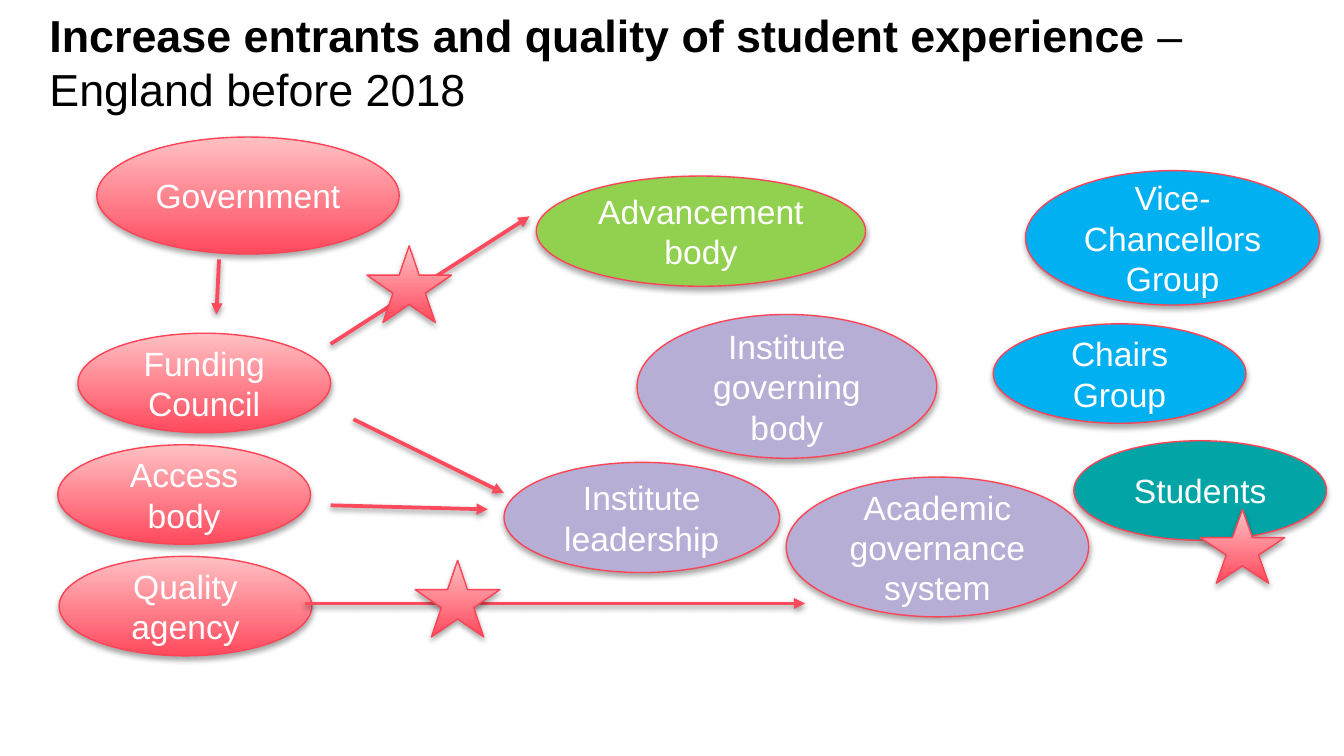
from pptx import Presentation
from pptx.dml.color import RGBColor
from pptx.enum.shapes import MSO_CONNECTOR, MSO_SHAPE
from pptx.enum.text import MSO_ANCHOR, PP_ALIGN
from pptx.oxml import parse_xml
from pptx.oxml.ns import nsdecls
from pptx.util import Inches, Pt

OVAL, STAR = MSO_SHAPE.OVAL, MSO_SHAPE.STAR_5_POINT
STRAIGHT = MSO_CONNECTOR.STRAIGHT
MIDDLE, CENTER = MSO_ANCHOR.MIDDLE, PP_ALIGN.CENTER

BLACK = RGBColor(0x00, 0x00, 0x00)
WHITE = RGBColor(0xFF, 0xFF, 0xFF)
RED = RGBColor(0xFF, 0x49, 0x5C)
PINK = RGBColor(0xFF, 0xC1, 0xC4)
EDGE = RGBColor(0xFD, 0x44, 0x57)
ARROW = RGBColor(0xFE, 0x4A, 0x5D)
BLUE = RGBColor(0x00, 0xB0, 0xF0)
GREEN = RGBColor(0x92, 0xD0, 0x50)
LILAC = RGBColor(0xB7, 0xAE, 0xD6)
TEAL = RGBColor(0x02, 0xA4, 0xA6)

HEAD = {"name": "Arial", "size": Pt(24)}
LABEL = {"name": "Arial", "size": Pt(18)}
SMALL = (1.88, 0.74)


def style(font, form, color):
    """Apply the format values and the colour to a font."""
    for key, value in form.items():
        setattr(font, key, value)
    font.color.rgb = color


def shade(item, alpha, dist):
    """Give a shape or connector a soft shadow straight below it."""
    item._element.spPr.append(parse_xml(
        f'<a:effectLst {nsdecls("a")}>'
        f'<a:outerShdw blurRad="{Pt(3.1)}" dist="{Pt(dist)}" dir="5400000" rotWithShape="0">'
        f'<a:srgbClr val="000000"><a:alpha val="{alpha * 1000}"/></a:srgbClr>'
        '</a:outerShdw></a:effectLst>'))


def figure(slide, kind, box, color=None):
    """Draw one outlined shape, with the red gradient if no colour is given."""
    shape = slide.shapes.add_shape(kind, *map(Inches, box))
    if color is None:
        shape.fill.gradient()
        shape.fill.gradient_angle = 90
        for stop, tone in zip(shape.fill.gradient_stops, (RED, PINK)):
            stop.color.rgb = tone
    else:
        shape.fill.solid()
        shape.fill.fore_color.rgb = color
    shape.line.color.rgb = EDGE
    shape.line.width = Pt(0.75)
    shade(shape, 35, 1.8)
    return shape


def heading(slide, box):
    """Write the heading with its bold and plain parts."""
    frame = slide.shapes.add_textbox(*map(Inches, box)).text_frame
    frame.word_wrap = True
    frame.vertical_anchor = MIDDLE
    line = frame.paragraphs[0]
    parts = (("Increase entrants and quality of student experience", True),
             (" – England before 2018", False))
    for text, bold in parts:
        run = line.add_run()
        run.text = text
        style(run.font, {**HEAD, "bold": bold}, BLACK)


def bodies(slide, left, top, ovals):
    """Place labelled ovals relative to the corner of their region."""
    for text, color, x, y, size in ovals:
        frame = figure(slide, OVAL, (left + x, top + y, *size), color).text_frame
        frame.word_wrap = True
        frame.vertical_anchor = MIDDLE
        line = frame.paragraphs[0]
        line.alignment = CENTER
        run = line.add_run()
        run.text = text
        style(run.font, LABEL, WHITE)


def funders(slide, left, top):
    """Place the state bodies, the lower three at an even step."""
    names = (("Funding Council", 0.15), ("Access body", 0), ("Quality agency", 0.01))
    ovals = [("Government", None, 0.29, 0, (2.25, 0.87))]
    ovals += [(name, None, x, 1.46 + 0.83 * row, SMALL)
              for row, (name, x) in enumerate(names)]
    bodies(slide, left, top, ovals)


def sector(slide, left, top):
    """Place the advancement body and the parts of the institute."""
    bodies(slide, left, top, (
        ("Advancement body", GREEN, 0.24, 0, (2.45, 0.82)),
        ("Institute governing body", LILAC, 0.99, 1.03, (2.23, 1.07)),
        ("Institute leadership", LILAC, 0, 2.13, (2.05, 0.82)),
        ("Academic governance system", LILAC, 2.1, 2.24, (2.25, 1.04))))


def members(slide, left, top):
    """Place the sector groups and the students."""
    bodies(slide, left, top, (
        ("Vice-Chancellors Group", BLUE, 0.24, 0, (2.19, 1)),
        ("Chairs Group", BLUE, 0, 1.14, SMALL),
        ("Students", TEAL, 0.6, 2.01, SMALL)))


def arrows(slide, left, top):
    """Draw the arrows of influence between the bodies."""
    routes = ((2.03, 1.54, 3.51, 0.59), (1.84, 3.47, 5.56, 3.47),
              (2.2, 2.1, 3.32, 2.65), (1.2, 0.91, 1.18, 1.32),
              (2.03, 2.74, 3.2, 2.77))
    for x1, y1, x2, y2 in routes:
        ends = (left + x1, top + y1, left + x2, top + y2)
        arrow = slide.shapes.add_connector(STRAIGHT, *map(Inches, ends))
        arrow.line.color.rgb = ARROW
        arrow.line.width = Pt(2)
        arrow.line._get_or_add_ln().append(
            parse_xml(f'<a:tailEnd {nsdecls("a")} type="triangle"/>'))
        shade(arrow, 38, 1.6)


def stars(slide, left, top):
    """Mark the key points with stars."""
    for x, y, height in ((2.3, 0.81, 0.57), (2.66, 3.15, 0.57), (8.5, 2.77, 0.55)):
        figure(slide, STAR, (left + x, top + y, 0.63, height))


def main():
    """Build and save the slide."""
    deck = Presentation()
    deck.slide_width = Inches(10)
    deck.slide_height = deck.slide_width * 9 // 16
    slide = deck.slides.add_slide(deck.slide_layouts[6])
    heading(slide, (0.27, -0.01, 9, 0.94))
    funders(slide, 0.43, 1.02)
    sector(slide, 3.75, 1.31)
    members(slide, 7.39, 1.27)
    arrows(slide, 0.43, 1.02)
    stars(slide, 0.43, 1.02)
    deck.save("out.pptx")


if __name__ == "__main__":
    main()
